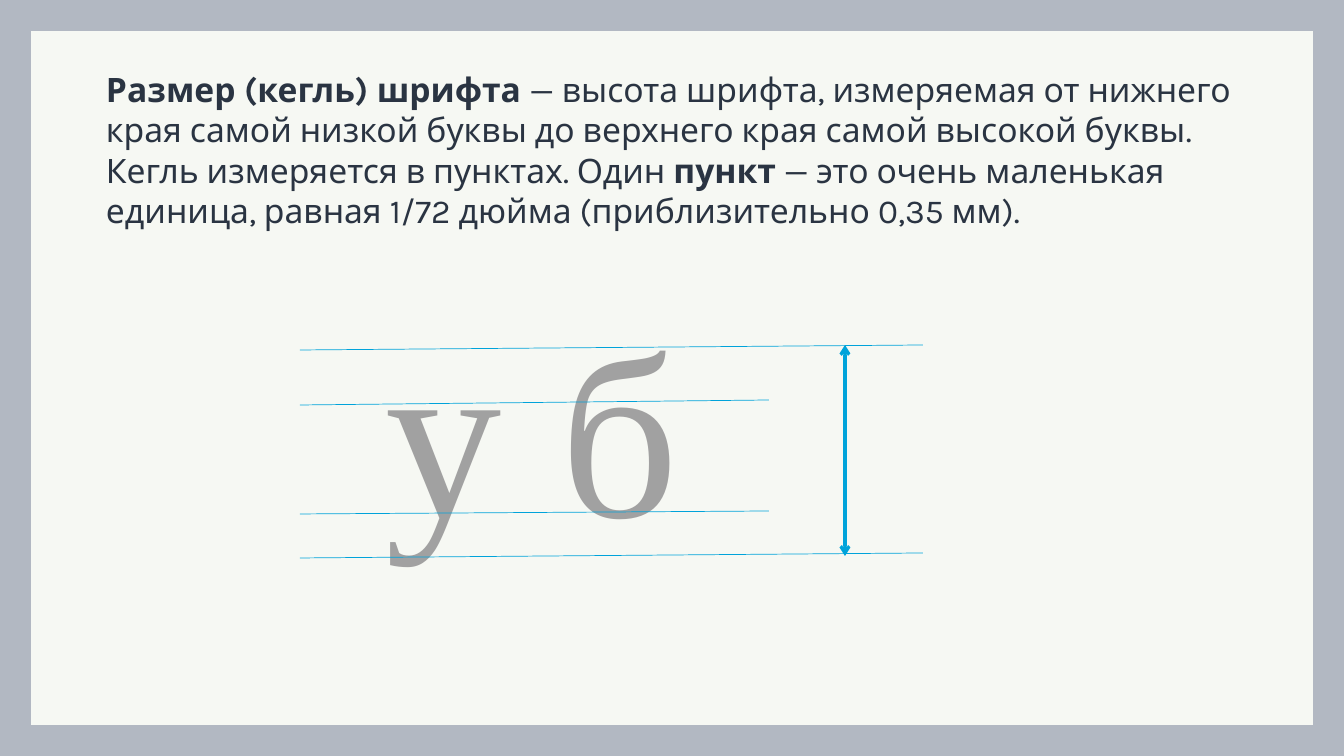
import pptx
import pptx.util
import pptx.dml.color
import pptx.enum.shapes
import lxml.etree

PX = 914400 / 100.8
WIDE, HIGH, EDGE = 1344, 756, 31
PAPER, FRAME, INK, GREY, BLUE = "F6F8F3", "B2B8C2", "2A3442", "A1A1A1", "00A3DA"

# Each paragraph is a list of (text, bold) runs.
RULE = [
    [("Размер (кегль) шрифта ", True),
     ("— высота шрифта, измеряемая от нижнего края самой низкой буквы "
      "до верхнего края самой высокой буквы.", False)],
    [("Кегль измеряется в пунктах. Один ", False),
     ("пункт", True),
     (" — это очень маленькая единица, равная 1/72 дюйма "
      "(приблизительно 0,35 мм).", False)],
]
SAMPLE = [[("у б", False)]]

# Guide lines: right end, left height, right height
LEFT = 300
GUIDES = [(769, 405, 400), (769, 514, 511), (923, 558, 553), (923, 350, 345)]
ARROW = (845, 345, 845, 556)


def px(*sizes):
    return [pptx.util.Emu(round(size * PX)) for size in sizes]


def color(code):
    return pptx.dml.color.RGBColor.from_string(code)


def band(slide, *box):
    bar = slide.shapes.add_shape(pptx.enum.shapes.MSO_SHAPE.RECTANGLE, *px(*box))
    bar.shadow.inherit = False
    bar.fill.solid()
    bar.fill.fore_color.rgb = color(FRAME)
    bar.line.fill.background()


def write(slide, box, paras, font, size, tint):
    frame = slide.shapes.add_textbox(*px(*box)).text_frame
    frame.word_wrap = True
    for index, parts in enumerate(paras):
        para = frame.add_paragraph() if index else frame.paragraphs[0]
        for text, bold in parts:
            run = para.add_run()
            run.text = text
            run.font.name = font
            run.font.size = pptx.util.Pt(size)
            run.font.bold = bold
            run.font.color.rgb = color(tint)


def draw(slide, ends, weight, heads=False):
    line = slide.shapes.add_connector(
        pptx.enum.shapes.MSO_CONNECTOR.STRAIGHT, *px(*ends))
    line.line.color.rgb = color(BLUE)
    line.line.width = pptx.util.Pt(weight)
    props = line._element.spPr
    if heads:
        stroke = line.line._get_or_add_ln()
        for name in ("a:headEnd", "a:tailEnd"):
            lxml.etree.SubElement(stroke, pptx.oxml.ns.qn(name), type="arrow")
    lxml.etree.SubElement(props, pptx.oxml.ns.qn("a:effectLst"))


def main():
    deck = pptx.Presentation()
    deck.slide_width, deck.slide_height = px(WIDE, HIGH)
    slide = deck.slides.add_slide(deck.slide_layouts[6])
    slide.background.fill.solid()
    slide.background.fill.fore_color.rgb = color(PAPER)

    for top in (0, HIGH - EDGE):
        band(slide, 0, top, WIDE, EDGE)
    for left in (0, WIDE - EDGE):
        band(slide, left, 0, EDGE, HIGH)

    write(slide, (96, 64, 1161, 173), RULE, "Karla", 24, INK)
    write(slide, (376, 280, 689, 291), SAMPLE, "Times New Roman", 166, GREY)
    for right, start, end in GUIDES:
        draw(slide, (LEFT, start, right, end), 0.5)
    draw(slide, ARROW, 2.25, heads=True)
    deck.save("out.pptx")


if __name__ == "__main__":
    main()
